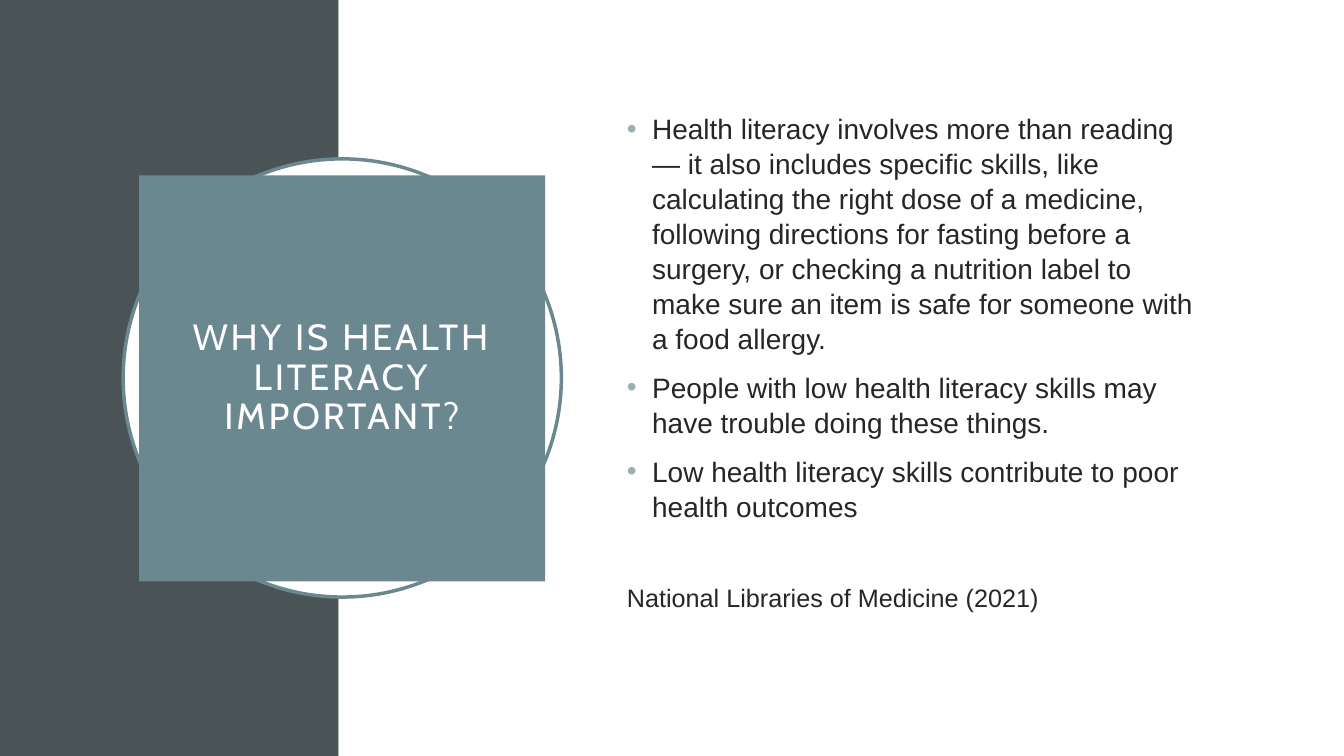
from lxml import etree
from pptx import Presentation
from pptx.dml.color import RGBColor
from pptx.enum.shapes import MSO_SHAPE as Shape
from pptx.enum.text import MSO_ANCHOR as Anchor, MSO_AUTO_SIZE as AutoSize, PP_ALIGN as Align
from pptx.oxml.ns import qn
from pptx.util import Pt

SLATE, TEAL, PALE_TEAL = "4A5356", "6B8891", "9BAFB5"
WHITE, INK = "FFFFFF", "262626"
BULLETS = [
    "Health literacy involves more than reading — it also includes specific skills, "
    "like calculating the right dose of a medicine, following directions for fasting "
    "before a surgery, or checking a nutrition label to make sure an item is safe for "
    "someone with a food allergy.",
    "People with low health literacy skills may have trouble doing these things.",
    "Low health literacy skills contribute to poor health outcomes",
]
CITATION = "National Libraries of Medicine (2021)"


def paint(color_format, color):
    color_format.rgb = RGBColor.from_string(color)


def place(shape, left, top, width, height):
    shape.left, shape.top = Pt(left), Pt(top)
    shape.width, shape.height = Pt(width), Pt(height)


presentation = Presentation()
presentation.slide_width, presentation.slide_height = Pt(960), Pt(540)
slide = presentation.slides.add_slide(presentation.slide_layouts[1])
title, body = slide.placeholders

# Background panels and ring
for kind, color, box in [
    (Shape.RECTANGLE, SLATE, (0, 0, 241.9, 540)),
    (Shape.RECTANGLE, WHITE, (241.9, 0, 718.1, 540)),
    (Shape.OVAL, WHITE, (88, 113.5, 313, 313)),
]:
    backdrop = slide.shapes.add_shape(kind, *map(Pt, box))
    backdrop.shadow.inherit = False
    backdrop.fill.solid()
    paint(backdrop.fill.fore_color, color)
    if kind == Shape.OVAL:
        paint(backdrop.line.color, TEAL)
        backdrop.line.width = Pt(2.5)
    else:
        backdrop.line.fill.background()

# Placeholders sit in front of the backdrop
for placeholder in (title, body):
    slide.shapes.element.append(placeholder.element)

# Title
place(title, 99.4, 125.2, 290, 290)
title.fill.solid()
paint(title.fill.fore_color, TEAL)
frame = title.text_frame
frame.text = "WHY IS HEALTH LITERACY IMPORTANT?"
frame.auto_size = AutoSize.NONE
frame.word_wrap = True
frame.vertical_anchor = Anchor.MIDDLE
frame.margin_left = frame.margin_right = frame.margin_top = frame.margin_bottom = Pt(14.4)
paragraph = frame.paragraphs[0]
paragraph.alignment = Align.CENTER
paragraph.line_spacing = 0.9
paragraph.font.size = Pt(26)
paragraph.font.name = "Cabin"
paint(paragraph.font.color, WHITE)
paragraph.runs[0].font._element.set("spc", "200")

# Bullets and citation
place(body, 440.6, 55.4, 419, 437)
frame = body.text_frame
frame.text = "\n".join(BULLETS + [CITATION])
frame.auto_size = AutoSize.NONE
frame.word_wrap = True
frame.vertical_anchor = Anchor.MIDDLE
frame.margin_bottom = Pt(35)
for paragraph in frame.paragraphs:
    is_citation = paragraph.text == CITATION
    paragraph.alignment = Align.LEFT
    paragraph.line_spacing = 1.04
    paragraph.space_before = Pt(41.5 if is_citation else 10)
    paragraph.font.size = Pt(18 if is_citation else 20)
    paragraph.font.name = "Arial"
    paint(paragraph.font.color, INK)
    properties = paragraph._p.get_or_add_pPr()
    indent = Pt(0 if is_citation else 18)
    properties.set("marL", str(indent))
    properties.set("indent", str(-indent))
    # Bullet elements belong ahead of the default run properties
    run_defaults = properties.find(qn("a:defRPr"))
    if is_citation:
        run_defaults.addprevious(etree.Element(qn("a:buNone")))
    else:
        bullet_color = etree.Element(qn("a:buClr"))
        etree.SubElement(bullet_color, qn("a:srgbClr"), val=PALE_TEAL)
        run_defaults.addprevious(bullet_color)
        run_defaults.addprevious(etree.Element(qn("a:buFont"), typeface="Arial"))
        run_defaults.addprevious(etree.Element(qn("a:buChar"), char="•"))

presentation.save("out.pptx")
